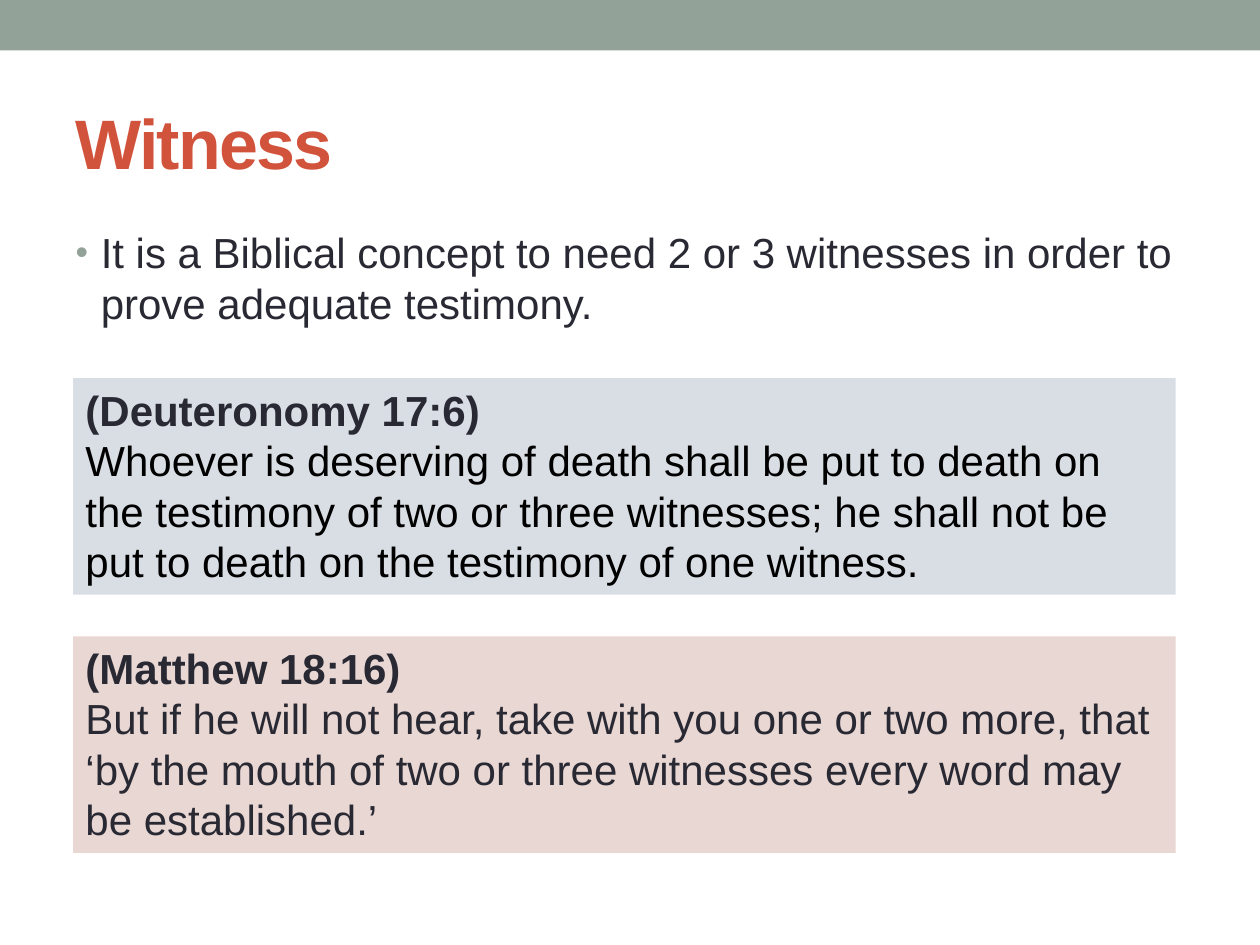
import pptx
import pptx.dml.color
import pptx.enum.shapes
import pptx.enum.text
import pptx.oxml
import pptx.oxml.ns
import pptx.util
from pptx.util import Inches

FONT = "Arial"
INK = "292934"
SAGE = "93A299"
BRICK = "D2533C"
PASSAGES = [
    ("(Deuteronomy 17:6)",
     "Whoever is deserving of death shall be put to death on the testimony of "
     "two or three witnesses; he shall not be put to death on the testimony of "
     "one witness.",
     "D9DEE4", "000000"),
    ("(Matthew 18:16)",
     "But if he will not hear, take with you one or two more, that ‘by the mouth "
     "of two or three witnesses every word may be established.’",
     "E9D7D3", INK),
]


def color(value):
    """Turn a hex string into a colour."""
    return pptx.dml.color.RGBColor.from_string(value)


def place(shape, left, top, width, height):
    """Move and size a shape, in inches."""
    shape.left, shape.top = Inches(left), Inches(top)
    shape.width, shape.height = Inches(width), Inches(height)


def add_run(paragraph, text, size=24, ink=INK, bold=False):
    """Add one formatted run to a left-aligned paragraph."""
    paragraph.alignment = pptx.enum.text.PP_ALIGN.LEFT
    run = paragraph.add_run()
    run.text = text
    run.font.name = FONT
    run.font.size = pptx.util.Pt(size)
    run.font.bold = bold
    run.font.color.rgb = color(ink)
    return run


def set_bullet(paragraph, indent, ink, percent):
    """Give a paragraph a hanging round bullet."""
    properties = paragraph._p.get_or_add_pPr()
    properties.set("marL", str(Inches(indent)))
    properties.set("indent", str(-Inches(indent)))
    namespace = pptx.oxml.ns.nsdecls("a")
    for xml in (
        f'<a:buClr {namespace}><a:srgbClr val="{ink}"/></a:buClr>',
        f'<a:buSzPct {namespace} val="{percent * 1000}"/>',
        f'<a:buFont {namespace} typeface="{FONT}"/>',
        f'<a:buChar {namespace} char="•"/>',
    ):
        properties.append(pptx.oxml.parse_xml(xml))


def add_rectangle(slide, left, top, width, height, fill):
    """Add a plain filled rectangle."""
    shape = slide.shapes.add_shape(
        pptx.enum.shapes.MSO_SHAPE.RECTANGLE,
        Inches(left), Inches(top), Inches(width), Inches(height))
    shape.shadow.inherit = False
    shape.fill.solid()
    shape.fill.fore_color.rgb = color(fill)
    shape.line.fill.background()
    return shape


def fill_title(slide, text):
    """Place and write the title."""
    title = slide.shapes.title
    place(title, 0.5, 0.58, 9, 1.08)
    frame = title.text_frame
    frame.auto_size = pptx.enum.text.MSO_AUTO_SIZE.NONE
    frame.vertical_anchor = pptx.enum.text.MSO_ANCHOR.MIDDLE
    run = add_run(frame.paragraphs[0], text, 40, BRICK, True)
    run.font._element.set("spc", "-100")


def fill_body(slide, text):
    """Place and write the bulleted statement."""
    body = slide.placeholders[1]
    place(body, 0.5, 1.75, 9, 0.92)
    body.text_frame.auto_size = pptx.enum.text.MSO_AUTO_SIZE.NONE
    paragraph = body.text_frame.paragraphs[0]
    set_bullet(paragraph, 0.2, SAGE, 85)
    add_run(paragraph, text)


def add_passage(slide, top, reference, quotation, fill, ink):
    """Add a tinted panel with a bold reference above its quotation."""
    panel = add_rectangle(slide, 0.58, top, 8.75, 1.72, fill)
    frame = panel.text_frame
    frame.word_wrap = True
    frame.vertical_anchor = pptx.enum.text.MSO_ANCHOR.TOP
    add_run(frame.paragraphs[0], reference, bold=True)
    add_run(frame.add_paragraph(), quotation, ink=ink)


def main():
    """Build and save the slide."""
    presentation = pptx.Presentation()
    presentation.slide_width = Inches(10)
    presentation.slide_height = Inches(7.5)
    slide = presentation.slides.add_slide(presentation.slide_layouts[1])
    add_rectangle(slide, 0, 0, 10, 0.4, SAGE)
    fill_title(slide, "Witness")
    fill_body(slide, "It is a Biblical concept to need 2 or 3 witnesses in order "
                     "to prove adequate testimony.")
    for index, passage in enumerate(PASSAGES):
        add_passage(slide, 3 + 2.05 * index, *passage)
    presentation.save("out.pptx")


if __name__ == "__main__":
    main()
